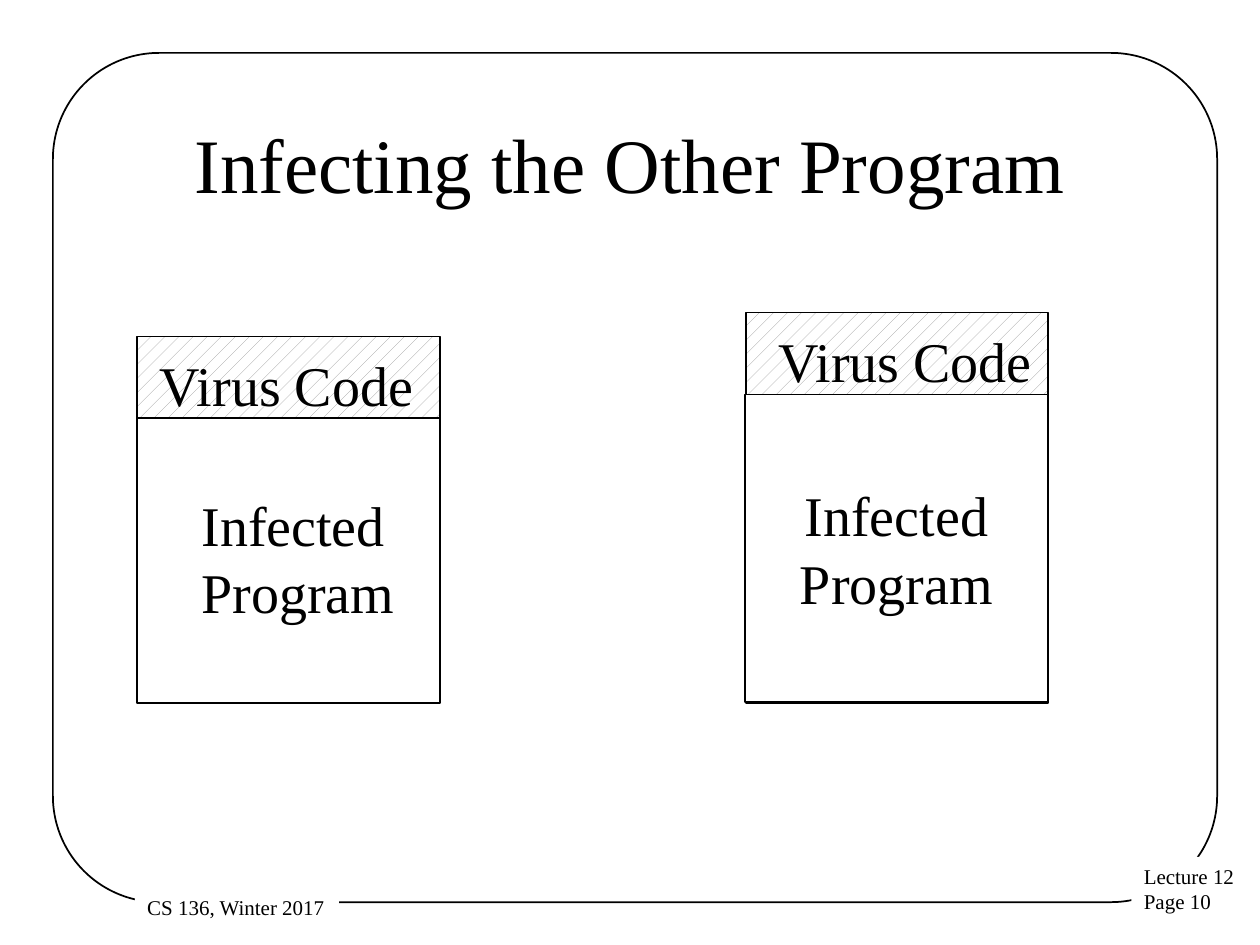
"""Build the slide that shows a virus infecting a second program."""
import pptx
import pptx.dml.color
import pptx.enum.dml
import pptx.enum.shapes
import pptx.enum.text
import pptx.util
from dataclasses import dataclass


@dataclass(frozen=True)
class Theme:
    font: str = "Times New Roman"
    ink: pptx.dml.color.RGBColor = pptx.dml.color.RGBColor(0, 0, 0)
    paper: pptx.dml.color.RGBColor = pptx.dml.color.RGBColor(255, 255, 255)
    hatch: pptx.dml.color.RGBColor = pptx.dml.color.RGBColor(150, 150, 150)
    title_size: int = 44
    label_size: int = 32
    footer_size: int = 12
    line_width: int = 1


theme = Theme()
presentation = pptx.Presentation()
presentation.slide_width = pptx.util.Inches(10)
presentation.slide_height = pptx.util.Inches(7.5)
column = presentation.slide_width / 100
row = presentation.slide_height / 100
slide = presentation.slides.add_slide(presentation.slide_layouts[6])
shape_kinds = pptx.enum.shapes.MSO_SHAPE
anchors = pptx.enum.text.MSO_ANCHOR
alignments = pptx.enum.text.PP_ALIGN


def add_box(left, top, width, height, kind=shape_kinds.RECTANGLE, fill="paper", outlined=True):
    shape = slide.shapes.add_shape(
        kind, round(left * column), round(top * row), round(width * column), round(height * row)
    )
    shape.shadow.inherit = False
    if fill == "hatch":
        shape.fill.patterned()
        shape.fill.pattern = pptx.enum.dml.MSO_PATTERN.PERCENT_10
        shape.fill.fore_color.rgb = theme.hatch
        shape.fill.back_color.rgb = theme.paper
    elif fill == "paper":
        shape.fill.solid()
        shape.fill.fore_color.rgb = theme.paper
    else:
        shape.fill.background()
    if outlined:
        shape.line.color.rgb = theme.ink
        shape.line.width = pptx.util.Pt(theme.line_width)
    else:
        shape.line.fill.background()
    return shape


def write_text(shape, text, size=theme.label_size, align=alignments.LEFT,
               anchor=anchors.TOP, wrap=False, grow=True):
    frame = shape.text_frame
    frame.text = text
    frame.word_wrap = wrap
    frame.vertical_anchor = anchor
    if grow:
        frame.auto_size = pptx.enum.text.MSO_AUTO_SIZE.SHAPE_TO_FIT_TEXT
    for paragraph in frame.paragraphs:
        paragraph.alignment = align
        paragraph.font.name = theme.font
        paragraph.font.size = pptx.util.Pt(size)
        paragraph.font.color.rgb = theme.ink


border = add_box(4.2, 5.6, 92.4, 89.87, kind=shape_kinds.ROUNDED_RECTANGLE, fill=None)
border.adjustments[0] = 0.125

footers = [
    ("Lecture 12\nPage 10", 89.8, 90.67, 9.3, 6.8),
    ("CS 136, Winter 2017", 10.7, 94, 16.2, 4),
]
for text, *place in footers:
    write_text(add_box(*place, outlined=False), text, size=theme.footer_size)

title = slide.shapes.add_textbox(
    round(7.5 * column), round(8.93 * row), round(85 * column), round(16.67 * row)
)
write_text(title, "Infecting the Other Program", size=theme.title_size,
           align=alignments.CENTER, anchor=anchors.MIDDLE, wrap=True, grow=False)

program_width, program_top, program_height = 24, 41.2, 33.2
virus_height = 8.67
programs = [(10.9, 35.6, 11.7), (59.2, 33.07, 60.8)]
for left, virus_top, label_left in programs:
    add_box(left, program_top, program_width, program_height)
    add_box(left, virus_top, program_width, virus_height, fill="hatch")
    virus_label = add_box(label_left, virus_top + 0.8, 22.3, 8.4, fill=None, outlined=False)
    write_text(virus_label, "Virus Code")

first_label = add_box(15, 51.2, 17.7, 15.47, fill=None, outlined=False)
write_text(first_label, "Infected\nProgram")
second_program = add_box(59.15, 41.73, program_width, 32.53)
write_text(second_program, "Infected\nProgram", align=alignments.CENTER,
           anchor=anchors.MIDDLE, grow=False)

presentation.save("out.pptx")
